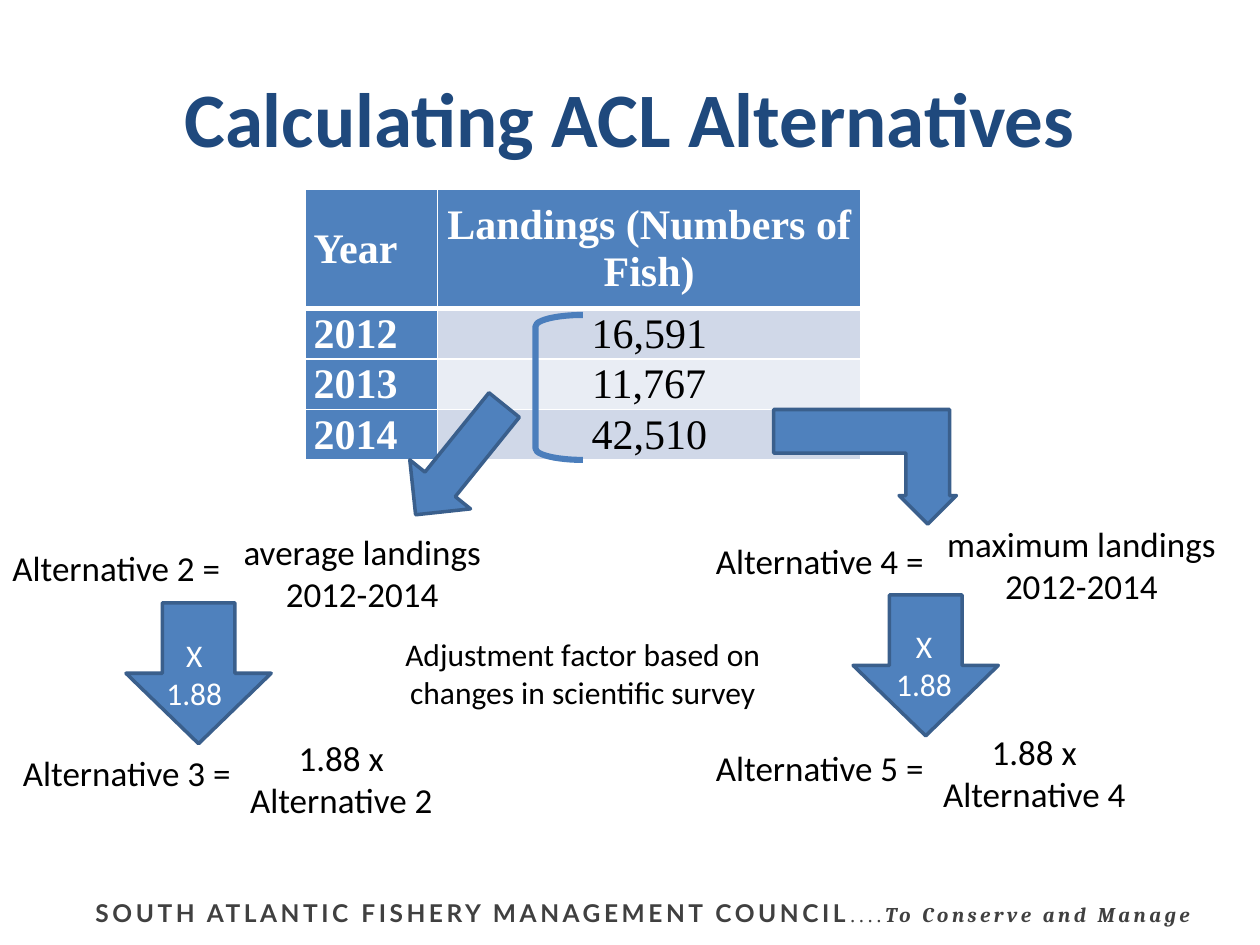
from lxml import etree
from pptx import Presentation
from pptx import util as u
from pptx.dml.color import RGBColor
from pptx.enum import shapes, text
from pptx.oxml.ns import qn

THEME = dict(
    blue="4F81BD", edge="3A5F8C", bracket="4B7EBC", navy="1F497D", gray="404040",
    white="FFFFFF", black="000000", bands=("D0D8E8", "E9EDF4"),
    body="Calibri", serif="Times New Roman", footer="Lato", motto="Cambria",
    title=44, cell=24, label=20, note=18, council=14, tagline=12)
T = THEME
CENTER, LEFT = text.PP_ALIGN.CENTER, text.PP_ALIGN.LEFT

# Content: all positions are left, top, width, height in points
TITLE = ("Calculating ACL Alternatives", (36, 21.6, 648, 90))
FOOTER_BOX = (47.5, 509.8, 672.5, 24.5)
FOOTER = [
    ("SOUTH ATLANTIC FISHERY MANAGEMENT COUNCIL", T["footer"], T["council"], True, False),
    ("....", T["serif"], T["tagline"], False, False),
    ("To Conserve and Manage", T["motto"], T["tagline"], True, True)]
LANDINGS = [("Year", "Landings (Numbers of Fish)"),
            ("2012", "16,591"), ("2013", "11,767"), ("2014", "42,510")]
TABLE_AT, COLS, HEAD_H, ROW_H = (174.2, 108), (75.8, 242), 68.4, 25.2
ALTERNATIVES = [  # name, its box, definition, its box
    ("Alternative 2 =", (0, 309, 144, 31.5),
     "average landings 2012-2014", (126, 299.5, 162, 78)),
    ("Alternative 4 =", (402, 304.5, 144, 31.5),
     "maximum landings 2012-2014", (528, 295, 180, 78)),
    ("Alternative 3 =", (6, 426, 138, 31.5),
     "1.88 x Alternative 2", (132, 417.5, 126, 80)),
    ("Alternative 5 =", (402, 423, 144, 31.5),
     "1.88 x Alternative 4", (528, 414, 126, 80))]
NOTE = ("Adjustment factor based on changes in scientific survey",
        (195, 359.5, 276, 51))
FACTOR = "X 1.88"
FACTORS = [  # arrow box, text box
    ((72, 344.5, 83, 80.5), (84, 360, 54, 51)),
    ((487.5, 340, 83, 80.5), (501, 355, 54, 51))]
AVERAGE_ARROW = (240.5, 222.5, 44.6, 80.6)
MAXIMUM_ARROW = (442.1, 234, 104.4, 65.5)
BRACKET = (306, 180, 27, 82.8)


def rgb(name):
    return RGBColor.from_string(name)


def pts(box):
    return [u.Pt(v) for v in box]


def add_run(p, words, size, color, font=T["body"], bold=False, italic=False):
    r = p.add_run()
    r.text = words
    f = r.font
    f.name, f.size, f.bold, f.italic = font, u.Pt(size), bold, italic
    f.color.rgb = rgb(color)
    return r


def add_box(s, box, align=LEFT, anchor=text.MSO_ANCHOR.TOP):
    tf = s.shapes.add_textbox(*pts(box)).text_frame
    tf.word_wrap = True
    tf.vertical_anchor = anchor
    p = tf.paragraphs[0]
    p.alignment = align
    return p


def add_shape(s, kind, box, fill=T["blue"], line=T["edge"], width=2, rotation=0, adj=()):
    sp = s.shapes.add_shape(kind, *pts(box))
    sp.shadow.inherit = False
    if fill:
        sp.fill.solid()
        sp.fill.fore_color.rgb = rgb(fill)
    else:
        sp.fill.background()
    sp.line.color.rgb = rgb(line)
    sp.line.width = u.Pt(width)
    sp.rotation = rotation
    for i, value in enumerate(adj):
        sp.adjustments[i] = value
    return sp


def set_borders(cell, color, **widths):
    tcPr = cell._tc.get_or_add_tcPr()
    for side in ("lnL", "lnR", "lnT", "lnB"):
        ln = etree.SubElement(tcPr, qn("a:" + side), w=str(u.Pt(widths.get(side, 1))))
        fill = etree.SubElement(ln, qn("a:solidFill"))
        etree.SubElement(fill, qn("a:srgbClr"), val=color)


def add_landings(s):
    height = HEAD_H + ROW_H * (len(LANDINGS) - 1)
    box = (*TABLE_AT, sum(COLS), height)
    table = s.shapes.add_table(len(LANDINGS), len(COLS), *pts(box)).table
    for column, width in zip(table.columns, COLS):
        column.width = u.Pt(width)
    for i, values in enumerate(LANDINGS):
        table.rows[i].height = u.Pt(ROW_H if i else HEAD_H)
        for j, value in enumerate(values):
            cell = table.cell(i, j)
            heading = i == 0 or j == 0
            cell.margin_left = cell.margin_right = u.Pt(5)
            cell.margin_top = cell.margin_bottom = 0
            cell.vertical_anchor = text.MSO_ANCHOR.MIDDLE
            edges = {"lnB": 3} if i == 0 else {"lnT": 3} if i == 1 else {}
            set_borders(cell, T["white"], **edges)
            cell.fill.solid()
            cell.fill.fore_color.rgb = rgb(T["blue"] if heading else T["bands"][(i - 1) % 2])
            p = cell.text_frame.paragraphs[0]
            p.alignment = CENTER if j else LEFT
            add_run(p, value, T["cell"], T["white"] if heading else T["black"],
                    T["serif"], heading)


def main():
    prs = Presentation()
    prs.slide_width, prs.slide_height = u.Pt(720), u.Pt(540)
    s = prs.slides.add_slide(prs.slide_layouts[6])
    kinds = shapes.MSO_SHAPE

    # Footer with letterspaced runs
    p = add_box(s, FOOTER_BOX)
    for words, font, size, bold, italic in FOOTER:
        r = add_run(p, words, size, T["gray"], font, bold, italic)
        r.font._element.set("spc", "200")

    # Title and landings table
    words, box = TITLE
    add_run(add_box(s, box, CENTER, text.MSO_ANCHOR.MIDDLE), words,
            T["title"], T["navy"], bold=True)
    add_landings(s)

    # Alternatives and the note between them
    for name, name_box, definition, definition_box in ALTERNATIVES:
        add_run(add_box(s, name_box), name, T["label"], T["black"])
        add_run(add_box(s, definition_box, CENTER), definition, T["label"], T["black"])
    words, box = NOTE
    add_run(add_box(s, box, CENTER), words, T["note"], T["black"])

    # Arrows with the adjustment factor
    add_shape(s, kinds.DOWN_ARROW, AVERAGE_ARROW, rotation=38.9)
    for arrow_box, factor_box in FACTORS:
        add_shape(s, kinds.DOWN_ARROW, arrow_box)
        add_run(add_box(s, factor_box, CENTER), FACTOR, T["note"], T["white"])

    # Arrow from the maximum, mirrored to point down, and the year bracket
    sp = add_shape(s, kinds.BENT_UP_ARROW, MAXIMUM_ARROW, rotation=180,
                   adj=(0.38, 0.25, 0.25))
    sp._element.spPr.find(qn("a:xfrm")).set("flipH", "1")
    add_shape(s, kinds.LEFT_BRACKET, BRACKET, fill=None, line=T["bracket"],
              width=3.5, adj=(0.24,))
    prs.save("out.pptx")


if __name__ == "__main__":
    main()
